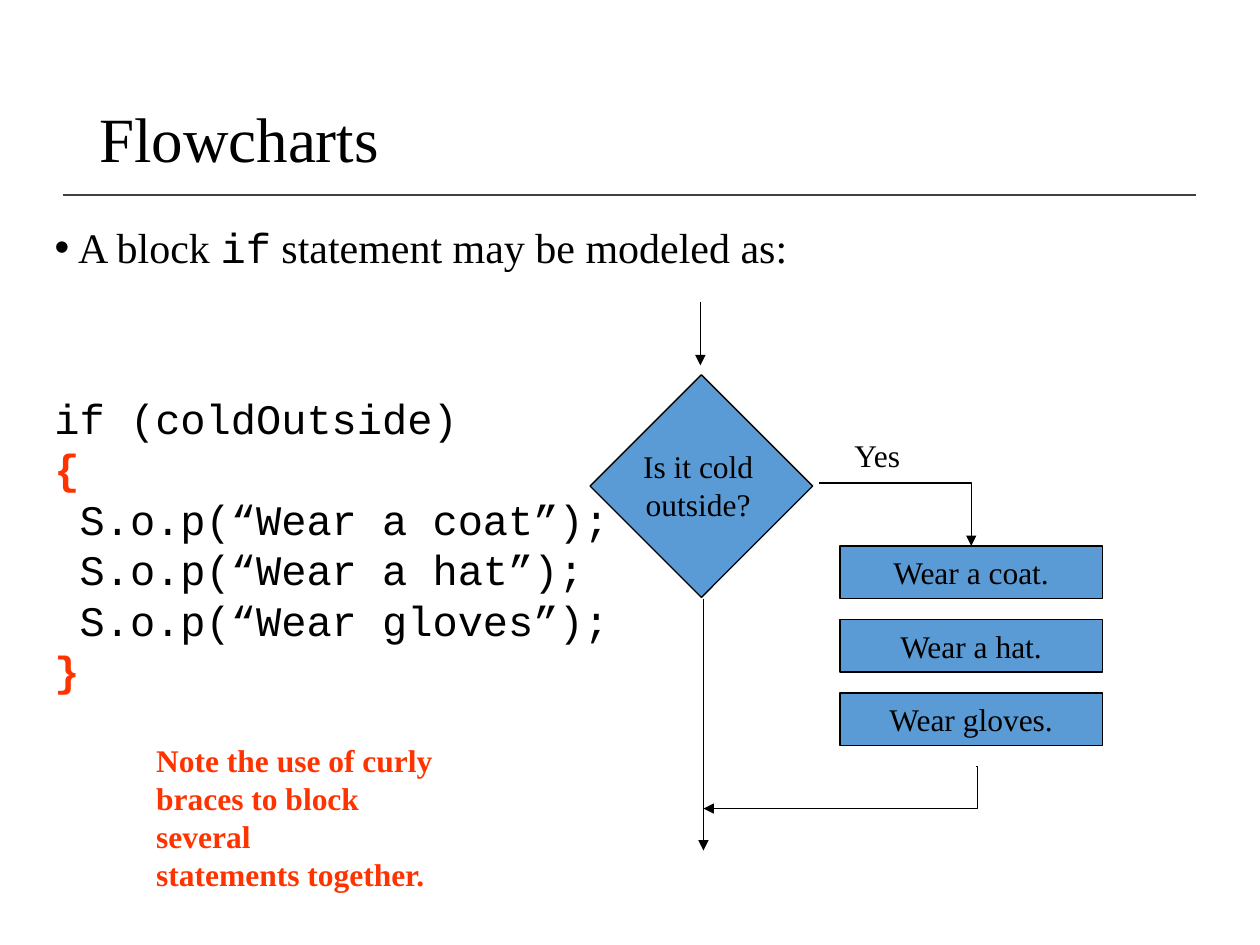
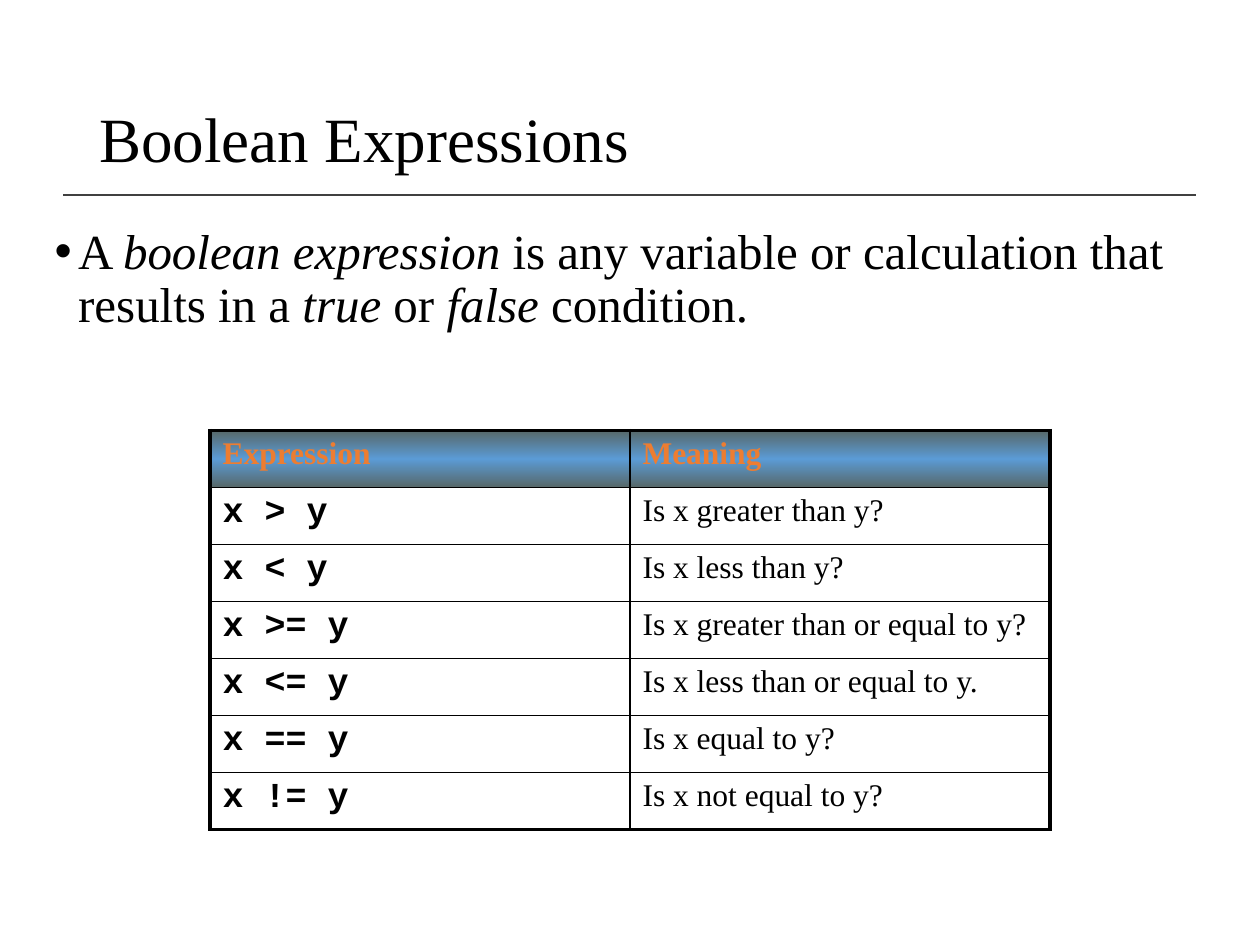
"""Build two slides on flowcharts and boolean expressions."""
from dataclasses import dataclass, field
from typing import Any, NamedTuple

from lxml.etree import SubElement
from pptx import Presentation
from pptx.dml.color import RGBColor
from pptx.enum.shapes import MSO_CONNECTOR, MSO_SHAPE
from pptx.enum.text import MSO_ANCHOR, MSO_AUTO_SIZE, PP_ALIGN
from pptx.oxml.ns import qn
from pptx.util import Inches, Pt

RECT = MSO_SHAPE.RECTANGLE
STRAIGHT, ELBOW = MSO_CONNECTOR.STRAIGHT, MSO_CONNECTOR.ELBOW
MIDDLE, TOP = MSO_ANCHOR.MIDDLE, MSO_ANCHOR.TOP
LEFT, CENTER = PP_ALIGN.LEFT, PP_ALIGN.CENTER
FIXED = MSO_AUTO_SIZE.NONE
WIDE, HIGH = Inches(10), Inches(7.5)
COLS, ROWS = 120, 90


@dataclass(frozen=True)
class Theme:
    """Hold the colours, fonts and type sizes."""
    ink: str = "000000"
    rule: str = "404040"
    blue: str = "5B9BD5"
    shade: str = "576869"
    red: str = "FF3300"
    orange: str = "ED7D31"
    serif: str = "Times New Roman"
    mono: str = "Courier New"
    title: float = 36
    lead: float = 28
    body: float = 24
    code: float = 20
    small: float = 18
    thin: float = 0.75
    line: float = 1
    thick: float = 2.25


THEME = Theme()


class Box(NamedTuple):
    """Place an area in grid columns and rows."""
    x: float
    y: float
    w: float
    h: float

    def size(self) -> tuple[int, int, int, int]:
        """Return left, top, width and height in EMU."""
        return across(self.x), down(self.y), across(self.w), down(self.h)


class Run(NamedTuple):
    """Pair a piece of text with its font changes."""
    text: str
    look: dict[str, Any] = {}


@dataclass(frozen=True)
class Label:
    """Describe a block of text, one list of runs a paragraph."""
    box: Box
    paras: list[list[Run]]
    size: float = THEME.small
    font: str = THEME.serif
    align: Any = LEFT
    wrap: bool = False


@dataclass(frozen=True)
class Link:
    """Describe a line between two grid points."""
    start: tuple[float, float]
    end: tuple[float, float]
    shape: str = "line"
    tip: bool = True
    bend: int | None = None
    color: str = THEME.ink
    width: float = THEME.thin


@dataclass(frozen=True)
class Page:
    """Describe the title and lead text of a slide."""
    title: str
    lead: list[Run]
    size: float
    rows: float
    box: Box = field(default=Box(8.25, 4.8, 103.5, 17.4))


MONO, SLANT = {"name": THEME.mono}, {"italic": True}
BRACE = {"color": THEME.red, "bold": True}
RULE = Link((6, 18.6), (113.9, 18.6), tip=False, color=THEME.rule, width=THEME.line)
FLOW = Page("Flowcharts", [Run("A block "), Run("if", MONO),
                           Run(" statement may be modeled as:")], THEME.body, 13.6)
LOGIC = Page("Boolean Expressions", [
    Run("A "), Run("boolean expression", SLANT),
    Run(" is any variable or calculation that results in a "), Run("true", SLANT),
    Run(" or "), Run("false", SLANT), Run(" condition.")], THEME.lead, 16)
STEPS = ["Wear a coat.", "Wear a hat.", "Wear gloves."]
LINKS = [
    Link((78, 46), (92.5, 52), "bentConnector2"),
    Link((67, 57), (67, 81)),
    Link((93, 73), (67, 77), "bentConnector3", bend=-500),
    Link((66.7, 28.8), (66.7, 34.8)),
]
LABELS = [
    Label(Box(80, 40.9, 7.1, 4.8), [[Run("Yes")]], align=CENTER),
    Label(Box(60, 42, 13, 8.4), [[Run("Is it cold")], [Run("outside?")]], align=CENTER),
    Label(Box(4, 36.8, 58, 30.2), [
        [Run("if (coldOutside)"), Run("\n"), Run("{", BRACE)],
        [Run(" S.o.p(“Wear a coat”);")],
        [Run(" S.o.p(“Wear a hat”);")],
        [Run(" S.o.p(“Wear gloves”);")],
        [Run("}", BRACE)]], THEME.body, THEME.mono, wrap=True),
    Label(Box(13.7, 70, 31.4, 12), [
        [Run(text, BRACE)] for text in (
            "Note the use of curly", "braces to block several", "statements together.")]),
]
TABLE = [
    ("Expression", "Meaning"),
    ("x > y", "Is x greater than y?"),
    ("x < y", "Is x less than y?"),
    ("x >= y", "Is x greater than or equal to y?"),
    ("x <= y", "Is x less than or equal to y."),
    ("x == y", "Is x equal to y?"),
    ("x != y", "Is x not equal to y?"),
]


def across(cols: float) -> int:
    """Turn grid columns into EMU."""
    return round(WIDE * cols / COLS)


def down(rows: float) -> int:
    """Turn grid rows into EMU."""
    return round(HIGH * rows / ROWS)


def put(item: Any, **values: Any) -> None:
    """Set each named value on the item."""
    for name, value in values.items():
        setattr(item, name, value)


def write(para: Any, runs: list[Run], size: float, font: str = THEME.serif) -> None:
    """Add formatted runs to a paragraph."""
    for run in runs:
        if run.text == "\n":
            para.add_line_break()
            continue
        part = para.add_run()
        part.text = run.text
        look = {"name": font, "size": Pt(size), "color": THEME.ink} | run.look
        part.font.color.rgb = RGBColor.from_string(look.pop("color"))
        put(part.font, **look)


def move(shape: Any, box: Box) -> None:
    """Move a placeholder to a grid area."""
    put(shape, **dict(zip(("left", "top", "width", "height"), box.size())))


def paint(node: Any, color: str) -> None:
    """Add a solid fill to an XML node."""
    SubElement(SubElement(node, qn("a:solidFill")), qn("a:srgbClr"), val=color)


def draw_link(slide: Any, link: Link) -> None:
    """Draw a straight or bent line."""
    kind = STRAIGHT if link.shape == "line" else ELBOW
    (x, y), (right, low) = link.start, link.end
    wire = slide.shapes.add_connector(kind, across(x), down(y), across(right), down(low))
    wire.line.color.rgb = RGBColor.from_string(link.color)
    wire.line.width = Pt(link.width)
    props = wire.element.spPr
    geom = props.find(qn("a:prstGeom"))
    geom.set("prst", link.shape)
    if link.bend is not None:
        SubElement(geom.find(qn("a:avLst")), qn("a:gd"), name="adj1", fmla=f"val {link.bend}")
    if link.tip:
        SubElement(props.find(qn("a:ln")), qn("a:tailEnd"), type="triangle")
    SubElement(props, qn("a:effectLst"))


def draw_label(slide: Any, label: Label) -> None:
    """Draw a block of text."""
    frame = slide.shapes.add_textbox(*label.box.size()).text_frame
    frame.word_wrap = label.wrap
    for index, runs in enumerate(label.paras):
        para = frame.add_paragraph() if index else frame.paragraphs[0]
        para.alignment = label.align
        write(para, runs, label.size, label.font)


def draw_rect(slide: Any, box: Box, text: str = "", turn: float = 0) -> None:
    """Draw a blue box, turned or with text."""
    shape = slide.shapes.add_shape(RECT, *box.size())
    shape.rotation = turn
    shape.shadow.inherit = False
    shape.fill.solid()
    shape.fill.fore_color.rgb = RGBColor.from_string(THEME.blue)
    shape.line.color.rgb = RGBColor.from_string(THEME.ink)
    shape.line.width = Pt(THEME.thin)
    if text:
        put(shape.text_frame, word_wrap=False, vertical_anchor=MIDDLE)
        para = shape.text_frame.paragraphs[0]
        para.alignment = CENTER
        write(para, [Run(text)], THEME.small)


def add_page(deck: Any, page: Page) -> Any:
    """Add a slide with its rule, title and lead."""
    slide = deck.slides.add_slide(deck.slide_layouts[1])
    draw_link(slide, RULE)
    title, lead = slide.placeholders
    move(title, page.box)
    move(lead, Box(4, 21, 108.8, page.rows))
    put(title.text_frame, vertical_anchor=MIDDLE, auto_size=FIXED)
    put(lead.text_frame, vertical_anchor=TOP, auto_size=FIXED)
    head, para = (item.text_frame.paragraphs[0] for item in (title, lead))
    put(head, alignment=LEFT, line_spacing=0.9)
    put(para, alignment=LEFT, line_spacing=0.9, space_before=Pt(7.5))
    write(head, [Run(page.title)], THEME.title)
    write(para, page.lead, page.size)
    props = para._p.get_or_add_pPr()
    for name, cols in (("marL", 2.25), ("indent", -2.25)):
        props.set(name, str(across(cols)))
    return slide


def edge(cell: Any, outer: dict[str, bool]) -> None:
    """Draw cell borders, thick on the outer sides."""
    for side, thick in outer.items():
        width = Pt(THEME.thick if thick else THEME.line)
        paint(SubElement(cell._tc.get_or_add_tcPr(), qn(f"a:ln{side}"), w=str(width)), THEME.ink)


def blend(cell: Any) -> None:
    """Fill a cell with a vertical blend of three stops."""
    grad = SubElement(cell._tc.get_or_add_tcPr(), qn("a:gradFill"), rotWithShape="1")
    stops = SubElement(grad, qn("a:gsLst"))
    for index, color in enumerate((THEME.shade, THEME.blue, THEME.shade)):
        stop = SubElement(stops, qn("a:gs"), pos=str(index * 50000))
        SubElement(stop, qn("a:srgbClr"), val=color)
    SubElement(grad, qn("a:lin"), ang="5400000", scaled="1")


def draw_table(slide: Any, box: Box) -> None:
    """Draw the table of expressions and meanings."""
    last, final = len(TABLE) - 1, len(TABLE[0]) - 1
    grid = slide.shapes.add_table(last + 1, final + 1, *box.size()).table
    put(grid, first_row=False, horz_banding=False)
    for row, texts in enumerate(TABLE):
        for col, text in enumerate(texts):
            cell = grid.cell(row, col)
            edge(cell, {"L": col == 0, "R": col == final, "T": row == 0, "B": row == last})
            size, font, look = THEME.small, THEME.serif, {"bold": False}
            if row == 0:
                blend(cell)
                look = {"bold": True, "color": THEME.orange}
            else:
                cell.fill.background()
                if col == 0:
                    size, font, look = THEME.code, THEME.mono, {"bold": True}
            write(cell.text_frame.paragraphs[0], [Run(text, look)], size, font)


def main() -> None:
    """Build and save the deck."""
    deck = Presentation()
    put(deck, slide_width=WIDE, slide_height=HIGH)
    flow = add_page(deck, FLOW)
    draw_rect(flow, Box(59.3, 38.8, 15, 15), turn=45)
    for index, text in enumerate(STEPS):
        draw_rect(flow, Box(80, 52 + 7 * index, 25, 5), text)
    for link in LINKS:
        draw_link(flow, link)
    for label in LABELS:
        draw_label(flow, label)
    draw_table(add_page(deck, LOGIC), Box(20, 41, 80, 38))
    deck.save("out.pptx")


if __name__ == "__main__":
    main()
